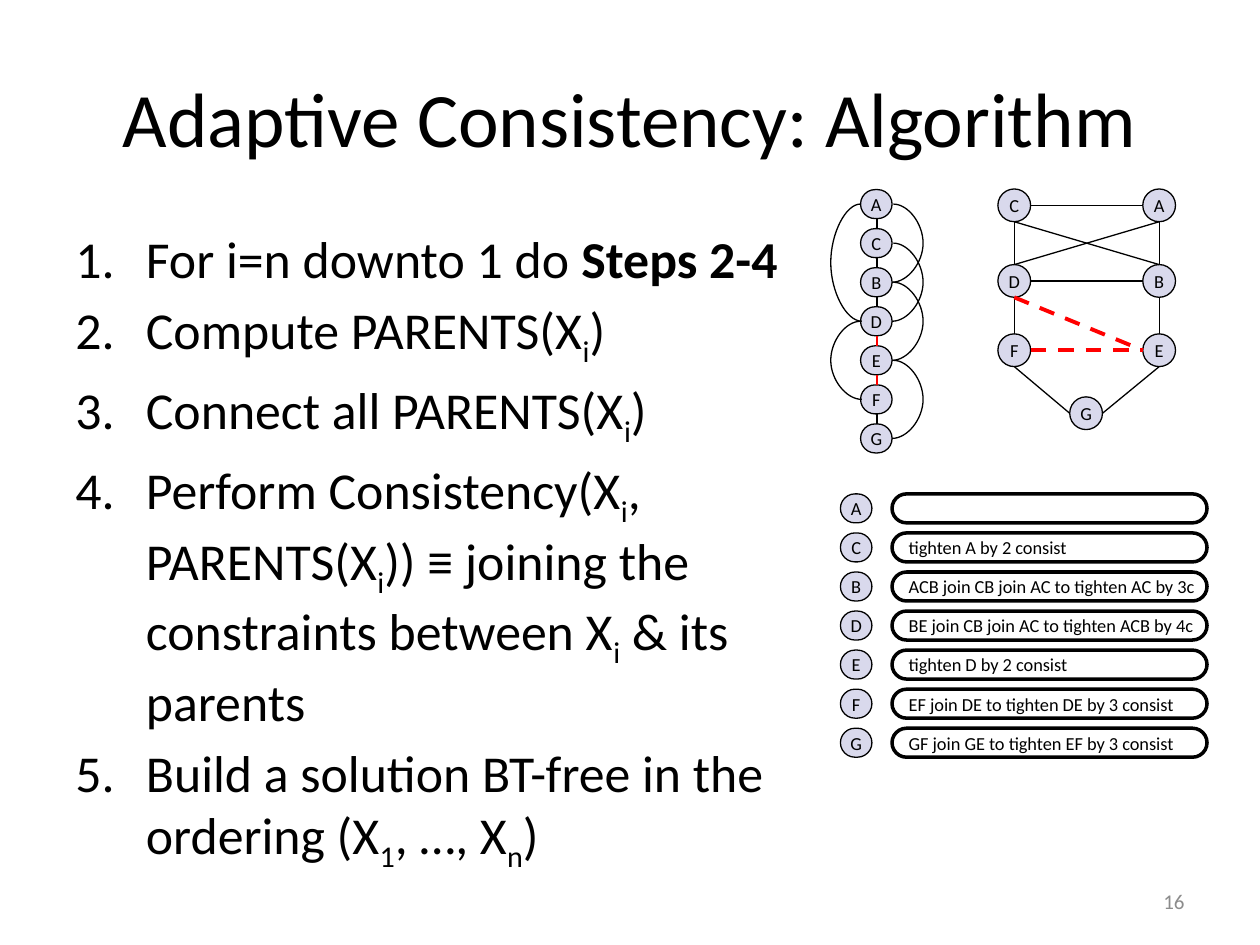
from pptx import Presentation
from pptx.dml.color import RGBColor
from pptx.enum.dml import MSO_LINE
from pptx.enum.shapes import MSO_CONNECTOR, MSO_SHAPE
from pptx.enum.text import MSO_ANCHOR, PP_ALIGN
from pptx.oxml.ns import qn
from pptx.util import Inches, Pt
from lxml.etree import SubElement

deck = Presentation()
deck.slide_width, deck.slide_height = Inches(10), Inches(7.5)
slide = deck.slides.add_slide(deck.slide_layouts[6])
shapes = slide.shapes
color = RGBColor.from_string


def pill(text, x, y, w, h, fill="000080", alpha=15, line=0.75, align=PP_ALIGN.CENTER):
    """Add a fully rounded box with a short label."""
    box = shapes.add_shape(MSO_SHAPE.ROUNDED_RECTANGLE,
                           Inches(x), Inches(y), Inches(w), Inches(h))
    box.adjustments[0] = 0.5
    box.shadow.inherit = False
    box.fill.solid()
    box.fill.fore_color.rgb = color(fill)
    if alpha < 100:
        tint = box.fill._xPr.find(qn("a:solidFill"))[0]
        SubElement(tint, qn("a:alpha")).set("val", str(alpha * 1000))
    box.line.color.rgb = color("000000")
    box.line.width = Pt(line)
    frame = box.text_frame
    frame.word_wrap = False
    frame.vertical_anchor = MSO_ANCHOR.MIDDLE
    para = frame.paragraphs[0]
    para.text = text
    para.alignment = align
    para.font.size, para.font.name = Pt(10.5), "Calibri"
    para.font.color.rgb = color("000000")


def link(start, end, tone="000000", width=0.75, dash=False, bulge=0):
    """Join two points; bulge is the depth of a curve in widths of its box."""
    kind = MSO_CONNECTOR.CURVE if bulge else MSO_CONNECTOR.STRAIGHT
    line = shapes.add_connector(kind, *(Inches(v) for v in (*start, *end)))
    line.line.color.rgb = color(tone)
    line.line.width = Pt(width)
    if dash:
        line.line.dash_style = MSO_LINE.DASH
    props = line._element.spPr
    SubElement(props, qn("a:effectLst"))
    if bulge:
        guide = SubElement(props.find(qn("a:prstGeom")).find(qn("a:avLst")), qn("a:gd"))
        guide.set("name", "adj1")
        guide.set("fmla", f"val {bulge * 100000}")


# Title and page number
for text, x, y, w, h, size, tone, align in (
    ("Adaptive Consistency: Algorithm", 0.5, 0.3, 9, 1.25, 44, "000000", PP_ALIGN.CENTER),
    ("16", 7.17, 6.95, 2.33, 0.4, 12, "8C8C8C", PP_ALIGN.RIGHT),
):
    frame = shapes.add_textbox(Inches(x), Inches(y), Inches(w), Inches(h)).text_frame
    frame.word_wrap = True
    frame.vertical_anchor = MSO_ANCHOR.MIDDLE
    para = frame.paragraphs[0]
    para.text = text
    para.alignment = align
    para.font.size, para.font.name = Pt(size), "Calibri"
    para.font.color.rgb = color(tone)

# Numbered steps: every second piece between bars is a subscript, or bold in step 1
steps = [
    "For i=n downto 1 do |Steps 2-4",
    "Compute PARENTS(X|i|)",
    "Connect all PARENTS(X|i|)",
    "Perform Consistency(X|i|, PARENTS(X|i|)) ≡ joining the constraints between X|i| & its parents",
    "Build a solution BT-free in the ordering (X|1|, …, X|n|)",
]
frame = shapes.add_textbox(Inches(0.5), Inches(1.75), Inches(6), Inches(4.95)).text_frame
frame.word_wrap = True
for i, step in enumerate(steps):
    para = frame.paragraphs[0] if i == 0 else frame.add_paragraph()
    para.space_before = Pt(5.2)
    para.font.size, para.font.name = Pt(29.6), "Calibri"
    para.font.color.rgb = color("000000")
    props = para._p.get_or_add_pPr()
    props.set("marL", str(Inches(0.56)))
    props.set("indent", str(-Inches(0.56)))
    mark = props.makeelement(qn("a:buAutoNum"), {"type": "arabicPeriod"})
    props.find(qn("a:defRPr")).addprevious(mark)
    for j, piece in enumerate(step.split("|")):
        run = para.add_run()
        run.text = piece
        if j % 2 and i == 0:
            run.font.bold = True
        elif j % 2:
            run.font._element.set("baseline", "-25000")

# Constraint graph
left, mid, right = 8.05, 8.62, 9.2
rows = top, low, base = 1.63, 2.23, 2.78
rad = 0.13
for name, x, y in (("C", left, top), ("A", right, top), ("D", left, low), ("B", right, low),
                   ("F", left, base), ("E", right, base), ("G", mid, 3.28)):
    pill(name, x - rad, y - rad, 2 * rad, 2 * rad)
for y in (top, low):
    link((left + rad, y), (right - rad, y))
for x, far in ((left, right), (right, left)):
    for y, below in zip(rows, rows[1:]):
        link((x, y + rad), (x, below - rad))
    link((x, top + rad), (far, low - rad))
    side = rad if x > mid else -rad
    link((x, base + rad), (mid + side, 3.28))
for start in ((left, low + rad), (left + rad, base)):
    link(start, (right - rad, base), "FF0000", 2.25, True)

# Ordered chain
order = "ACBDEFG"
pitch, tall, wide = 0.31, 0.23, 0.25
ys = [1.62 + pitch * i for i in range(len(order))]
spot = dict(zip(order, ys))
for name, y in spot.items():
    pill(name, 6.83, y - tall / 2, wide, tall)
for pair, y in zip(zip(order, order[1:]), ys):
    new = pair in (("D", "E"), ("E", "F"))
    link((6.96, y + pitch - tall / 2), (6.96, y + tall / 2),
         "FF0000" if new else "000000", 1.5 if new else 0.75, new)
for low_end, high_end in ("BA", "DC", "EB", "GE"):
    link((7.08, spot[low_end]), (7.09, spot[high_end]), bulge=25)
for low_end, high_end in ("DA", "FD"):
    link((6.84, spot[low_end]), (6.83, spot[high_end]), bulge=25)

# Buckets
notes = [
    "",
    "tighten A by 2 consist",
    "ACB join CB join AC to tighten AC by 3c",
    "BE join CB join AC to tighten ACB by 4c",
    "tighten D by 2 consist",
    "EF join DE to tighten DE by 3 consist",
    "GF join GE to tighten EF by 3 consist",
]
for i, (name, note) in enumerate(zip(order, notes)):
    y = 3.92 + pitch * i
    pill(name, 6.67, y, wide, tall)
    pill(note, 7.08, y, 2.5, tall, "FFFFFF", 100, 2, PP_ALIGN.LEFT)

deck.save("out.pptx")
